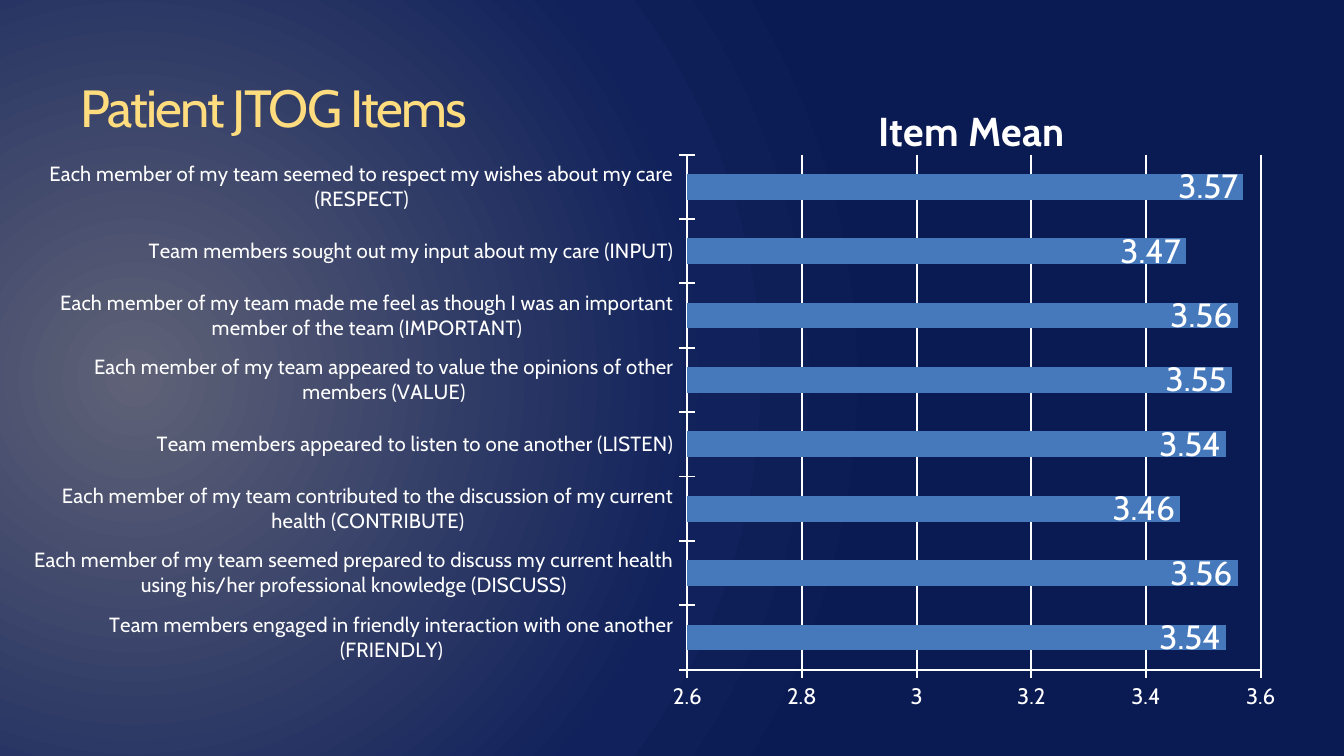
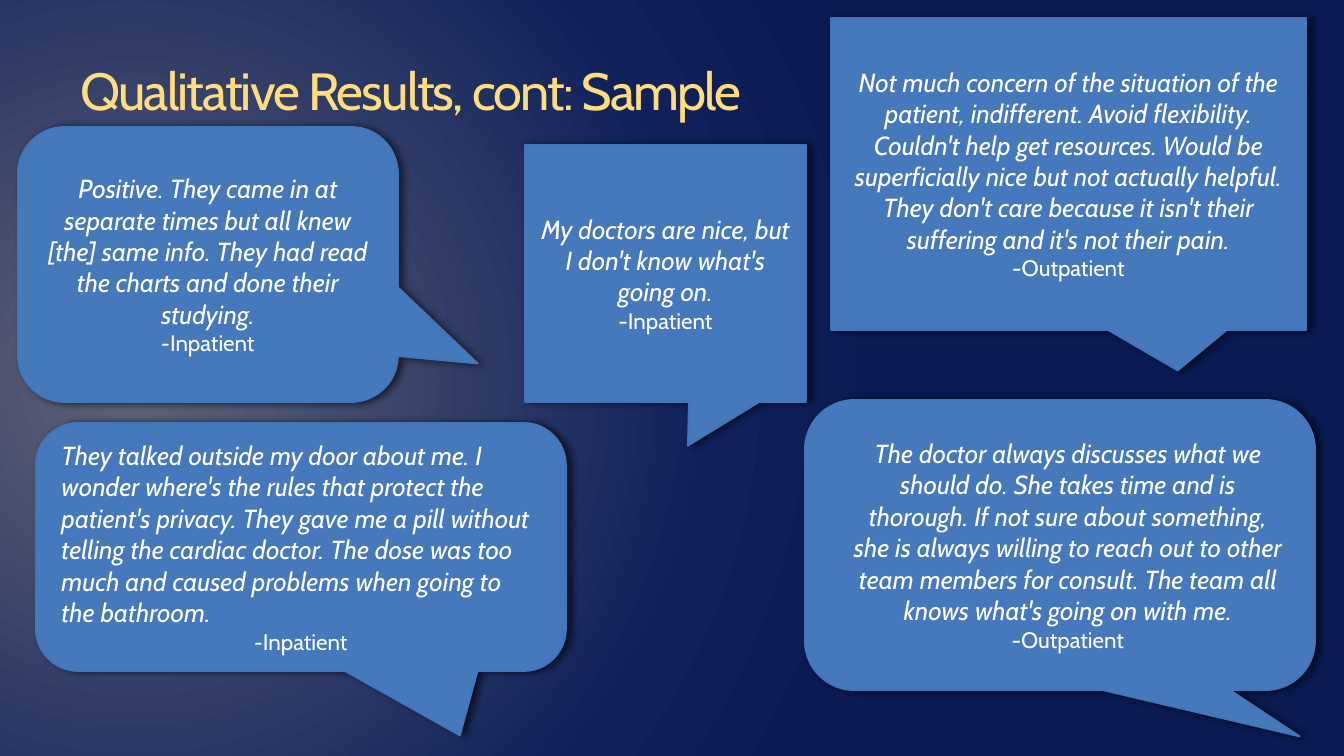
"""Build two slides: patient survey item means and sample patient quotes."""
import pptx
import pptx.chart.data
import pptx.dml.color
import pptx.enum.chart
import pptx.enum.shapes
import pptx.enum.text
import pptx.oxml
import pptx.oxml.ns
import pptx.util

PX = 914400 / 134.4
FONT = "Cabin"
COLORS = {
    "title": "FFDD7F", "text": "FFFFFF", "fill": "4678BC", "line": "4275BB",
    "shadow": "000000", "glow": "5F6277", "mid": "10215B", "edge": "0A1A52",
}
ROUND = pptx.enum.shapes.MSO_SHAPE.ROUNDED_RECTANGULAR_CALLOUT
RECT = pptx.enum.shapes.MSO_SHAPE.RECTANGULAR_CALLOUT
LEFT = pptx.enum.text.PP_ALIGN.LEFT
CENTER = pptx.enum.text.PP_ALIGN.CENTER

ITEM_MEANS = [
    ("Team members engaged in friendly interaction with one another (FRIENDLY)", 3.54),
    ("Each member of my team seemed prepared to discuss my current health "
     "using his/her professional knowledge (DISCUSS)", 3.56),
    ("Each member of my team contributed to the discussion of my current "
     "health (CONTRIBUTE)", 3.46),
    ("Team members appeared to listen to one another (LISTEN)", 3.54),
    ("Each member of my team appeared to value the opinions of other members (VALUE)", 3.55),
    ("Each member of my team made me feel as though I was an important "
     "member of the team (IMPORTANT)", 3.56),
    ("Team members sought out my input about my care (INPUT)", 3.47),
    ("Each member of my team seemed to respect my wishes about my care (RESPECT)", 3.57),
]

QUOTES = [
    dict(kind=ROUND, box=(805, 400, 510, 290), adj=(0.47, 0.66, 0.17), indent=16,
         quote="The doctor always discusses what we should do. She takes time and is "
               "thorough. If not sure about something, she is always willing to reach out "
               "to other team members for consult. The team all knows what's going on "
               "with me.",
         source=[("-Outpatient", False)]),
    dict(kind=ROUND, box=(18, 127, 380, 275), adj=(0.71, 0.36, 0.17),
         quote="Positive. They came in at separate times but all knew [the] same info. "
               "They had read the charts and done their studying.",
         source=[("-", True), ("Inpatient", False)]),
    dict(kind=ROUND, box=(36, 423, 530, 248), adj=(0.3, 0.76, 0.17), align=LEFT,
         quote="They talked outside my door about me. I wonder where's the rules that "
               "protect the patient's privacy. They gave me a pill without telling the "
               "cardiac doctor. The dose was too much and caused problems when going to "
               "the bathroom.",
         source=[("-", True), ("Inpatient", False)]),
    dict(kind=RECT, box=(831, 18, 475, 312), adj=(0.23, 0.63),
         quote="Not much concern of the situation of the patient, indifferent. Avoid "
               "flexibility. Couldn't help get resources. Would be superficially nice but "
               "not actually helpful. They don't care because it isn't their suffering "
               "and it's not their pain.",
         source=[("-Outpatient", False)]),
    dict(kind=RECT, box=(525, 145, 281, 257), adj=(0.08, 0.67),
         quote="My doctors are nice, but I don't know what's going on.",
         source=[("-Inpatient", False)]),
]


def px(*lengths):
    """Turn pixel lengths into EMU."""
    return [round(n * PX) for n in lengths]


def rgb(name):
    """Look up a named colour."""
    return pptx.dml.color.RGBColor.from_string(COLORS[name])


def xml(tag, body, attrs=""):
    """Parse one element with the drawing and chart namespaces."""
    return pptx.oxml.parse_xml(
        f"<{tag} {pptx.oxml.ns.nsdecls('a', 'c')} {attrs}>{body}</{tag}>")


def place(parent, index, **sides):
    """Give a chart part a manual layout in fractions of the chart."""
    old = parent.find(pptx.oxml.ns.qn("c:layout"))
    if old is not None:
        parent.remove(old)
    target = '<c:layoutTarget val="inner"/>' if "w" in sides else ""
    modes = '<c:xMode val="edge"/><c:yMode val="edge"/>'
    values = "".join(f'<c:{k} val="{v}"/>' for k, v in sides.items())
    parent.insert(index, xml(
        "c:layout", f"<c:manualLayout>{target}{modes}{values}</c:manualLayout>"))


class Deck:
    """Hold the style and the current slide."""

    def __init__(self, prs):
        """Set the slide size and the shared background."""
        self.prs = prs
        prs.slide_width, prs.slide_height = px(1344, 756)
        self.slide = None
        self.background()

    def background(self):
        """Fill the master with a radial gradient."""
        master = self.prs.slide_master
        master.background.fill.gradient()
        old = next(master.element.iter(pptx.oxml.ns.qn("a:gradFill")))
        stops = "".join(
            f'<a:gs pos="{pos * 1000}"><a:srgbClr val="{COLORS[name]}"/></a:gs>'
            for pos, name in ((0, "glow"), (75, "mid"), (100, "edge")))
        old.getparent().replace(old, xml(
            "a:gradFill",
            f'<a:gsLst>{stops}</a:gsLst><a:path path="circle">'
            '<a:fillToRect l="20000" t="50000" r="100000" b="50000"/></a:path>',
            'rotWithShape="1"'))

    def font(self, font, size, color="text", **flags):
        """Format a font."""
        font.name = FONT
        font.size = pptx.util.Pt(size)
        font.color.rgb = rgb(color)
        for name, value in flags.items():
            setattr(font, name, value)

    def add_slide(self, title, box):
        """Start a slide with a title."""
        self.slide = self.prs.slides.add_slide(self.prs.slide_layouts[5])
        sp = self.slide.shapes.title
        sp.left, sp.top, sp.width, sp.height = px(*box)
        tf = sp.text_frame
        tf.text = title
        tf.vertical_anchor = pptx.enum.text.MSO_ANCHOR.TOP
        p = tf.paragraphs[0]
        p.alignment = LEFT
        self.font(p.runs[0].font, 28, "title")
        p.runs[0].font._element.set("spc", "-100")

    def axis(self, axis, size):
        """Format a chart axis."""
        axis.major_tick_mark = pptx.enum.chart.XL_TICK_MARK.CROSS
        axis.minor_tick_mark = pptx.enum.chart.XL_TICK_MARK.NONE
        axis.format.line.color.rgb = rgb("text")
        axis.format.line.width = pptx.util.Pt(1)
        self.font(axis.tick_labels.font, size)

    def bar_chart(self, name, items, box):
        """Add a horizontal bar chart with value labels."""
        data = pptx.chart.data.CategoryChartData()
        data.categories = [label for label, _ in items]
        data.add_series(name, [value for _, value in items])
        chart = self.slide.shapes.add_chart(
            pptx.enum.chart.XL_CHART_TYPE.BAR_CLUSTERED, *px(*box), data).chart
        self.font(chart.font, 18)
        chart.has_legend = False
        chart.has_title = True
        p = chart.chart_title.text_frame.paragraphs[0]
        p.text = name
        self.font(p.runs[0].font, 21.6, bold=True)
        place(chart.chart_title._element, 1, x=0.66, y=0.04)
        plot = chart.plots[0]
        place(plot._element.getparent(), 0, x=0.513, y=0.13, w=0.458, h=0.782)

        plot.gap_width = 150
        plot.vary_by_categories = False
        fill = plot.series[0].format.fill
        fill.solid()
        fill.fore_color.rgb = rgb("fill")
        plot.has_data_labels = True
        labels = plot.data_labels
        labels.show_value = True
        labels.position = pptx.enum.chart.XL_LABEL_POSITION.INSIDE_END
        self.font(labels.font, 18)

        self.axis(chart.category_axis, 11)
        axis = chart.value_axis
        self.axis(axis, 12)
        axis.minimum_scale, axis.maximum_scale, axis.major_unit = 2.6, 3.6, 0.2
        axis.tick_labels.number_format = "General"
        axis.tick_labels.number_format_is_linked = False
        axis.has_major_gridlines = True
        line = axis.major_gridlines.format.line
        line.color.rgb = rgb("text")
        line.width = pptx.util.Pt(1)

    def shadow(self, sp):
        """Give a shape a soft shadow to its right."""
        sp.shadow.inherit = False
        effects = sp._element.spPr.find(pptx.oxml.ns.qn("a:effectLst"))
        blur, dist = pptx.util.Pt(4), pptx.util.Pt(2)
        effects.append(xml(
            "a:outerShdw",
            f'<a:srgbClr val="{COLORS["shadow"]}"><a:alpha val="60000"/></a:srgbClr>',
            f'blurRad="{blur}" dist="{dist}" dir="0" algn="tl" rotWithShape="0"'))

    def callout(self, kind, box, adj, quote, source, align=CENTER, indent=0):
        """Add a speech bubble with a quote and its source."""
        sp = self.slide.shapes.add_shape(kind, *px(*box))
        for i, value in enumerate(adj):
            sp.adjustments[i] = value
        sp.fill.solid()
        sp.fill.fore_color.rgb = rgb("fill")
        sp.line.color.rgb = rgb("line")
        sp.line.width = pptx.util.Pt(1)
        self.shadow(sp)
        tf = sp.text_frame
        tf.word_wrap = True
        tf.vertical_anchor = pptx.enum.text.MSO_ANCHOR.MIDDLE
        paragraphs = (
            (tf.paragraphs[0], [(quote, True)], 14, align),
            (tf.add_paragraph(), source, 12, CENTER),
        )
        for p, runs, size, alignment in paragraphs:
            p.alignment = alignment
            if indent:
                pPr = p._p.get_or_add_pPr()
                pPr.set("marL", str(px(indent)[0]))
                pPr.set("indent", "0")
            for text, italic in runs:
                r = p.add_run()
                r.text = text
                self.font(r.font, size, italic=italic)


def main():
    """Build and save the slides."""
    prs = pptx.Presentation()
    deck = Deck(prs)
    deck.add_slide("Patient JTOG Items", (67, 69, 1230, 150))
    deck.bar_chart("Item Mean", ITEM_MEANS, (34, 69, 1263, 659))
    deck.add_slide("Qualitative Results, cont: Sample", (67, 51, 1210, 129))
    for quote in QUOTES:
        deck.callout(**quote)
    prs.save("out.pptx")


if __name__ == "__main__":
    main()
